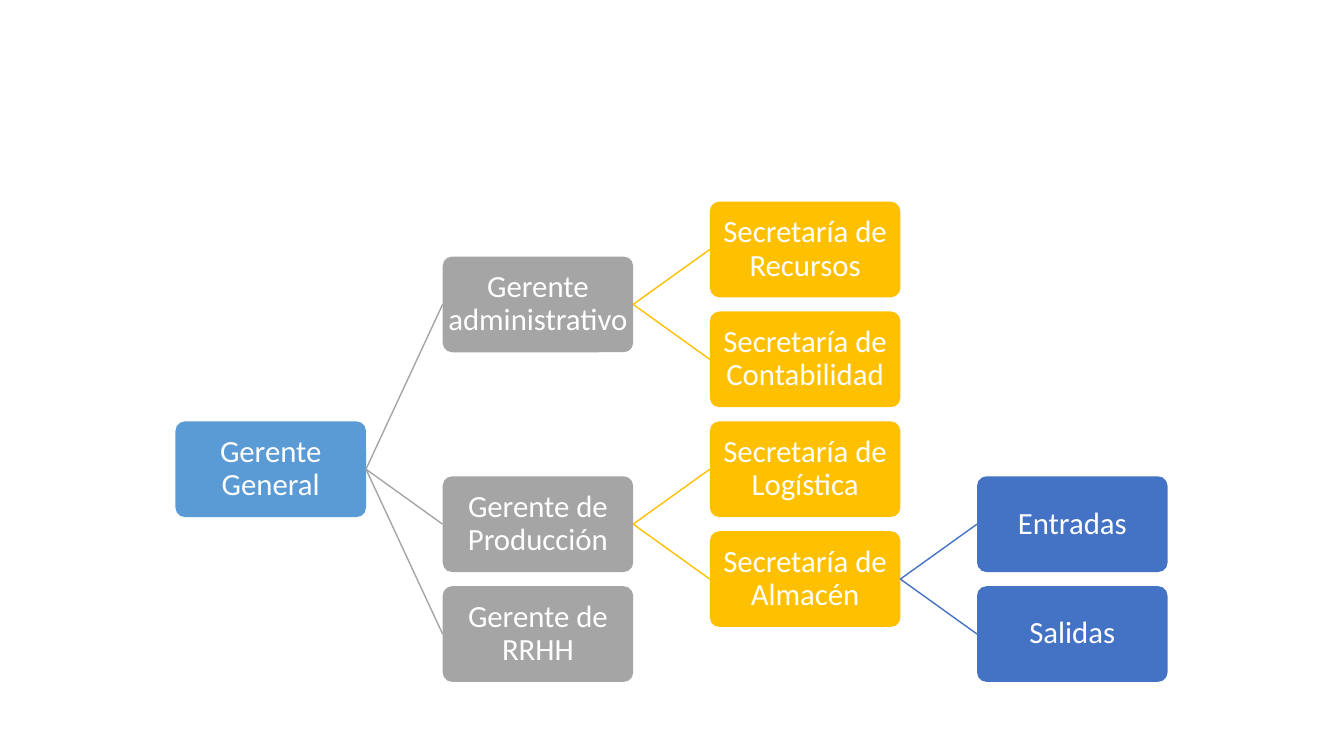
"""Build a horizontal organisation chart slide."""
import pptx
import pptx.dml.color
import pptx.enum.shapes
import pptx.enum.text
import pptx.oxml
import pptx.util
from pptx.util import Inches

COLORS = {"text": "FFFFFF", "general": "5B9BD5", "manager": "A5A5A5",
          "secretary": "FFC000", "movement": "4472C4"}
LEVELS = ["general", "manager", "secretary", "movement"]
LEFT, TOP = 1.74, 2.0
COLUMN_STEP, ROW_STEP = 2.65, 1.09
BOX_WIDTH, BOX_HEIGHT = 1.89, 0.95
TEXT_MARGIN = 0.01

POSITIONS = [
    ("Gerente General", 0, 2, None),
    ("Gerente administrativo", 1, 0.5, "Gerente General"),
    ("Secretaría de Recursos", 2, 0, "Gerente administrativo"),
    ("Secretaría de Contabilidad", 2, 1, "Gerente administrativo"),
    ("Gerente de Producción", 1, 2.5, "Gerente General"),
    ("Secretaría de Logística", 2, 2, "Gerente de Producción"),
    ("Secretaría de Almacén", 2, 3, "Gerente de Producción"),
    ("Entradas", 3, 2.5, "Secretaría de Almacén"),
    ("Salidas", 3, 3.5, "Secretaría de Almacén"),
    ("Gerente de RRHH", 1, 3.5, "Gerente General"),
]


def rgb(name):
    return pptx.dml.color.RGBColor.from_string(COLORS[name])


def add_position(slide, name, level, row):
    box = slide.shapes.add_shape(
        pptx.enum.shapes.MSO_SHAPE.ROUNDED_RECTANGLE,
        Inches(LEFT + level * COLUMN_STEP), Inches(TOP + row * ROW_STEP),
        Inches(BOX_WIDTH), Inches(BOX_HEIGHT))
    box.adjustments[0] = 0.1
    box.shadow.inherit = False
    box.fill.solid()
    box.fill.fore_color.rgb = rgb(LEVELS[level])
    box.line.fill.background()
    frame = box.text_frame
    frame.word_wrap = True
    frame.vertical_anchor = pptx.enum.text.MSO_ANCHOR.MIDDLE
    frame.margin_left = frame.margin_right = Inches(TEXT_MARGIN)
    frame.margin_top = frame.margin_bottom = Inches(TEXT_MARGIN)
    label = frame.paragraphs[0]
    label.text = name
    label.alignment = pptx.enum.text.PP_ALIGN.CENTER
    label.line_spacing = 0.9
    label.font.name = "Calibri"
    label.font.size = pptx.util.Pt(22)
    label.font.color.rgb = rgb("text")
    return box


def add_branch(slide, superior, subordinate, level):
    branch = slide.shapes.add_connector(
        pptx.enum.shapes.MSO_CONNECTOR.STRAIGHT, 0, 0, 0, 0)
    branch.begin_connect(superior, 3)
    branch.end_connect(subordinate, 1)
    branch.line.color.rgb = rgb(LEVELS[level])
    branch.line.width = pptx.util.Pt(1)
    branch.element.spPr.append(pptx.oxml.parse_xml(
        '<a:effectLst xmlns:a="http://schemas.openxmlformats.org/drawingml/2006/main"/>'))


def main():
    deck = pptx.Presentation()
    deck.slide_width, deck.slide_height = Inches(13.33), Inches(7.5)
    slide = deck.slides.add_slide(deck.slide_layouts[6])
    boxes = {}
    for name, level, row, superior in POSITIONS:
        boxes[name] = add_position(slide, name, level, row)
        if superior:
            add_branch(slide, boxes[superior], boxes[name], level)
    deck.save("out.pptx")


if __name__ == "__main__":
    main()
